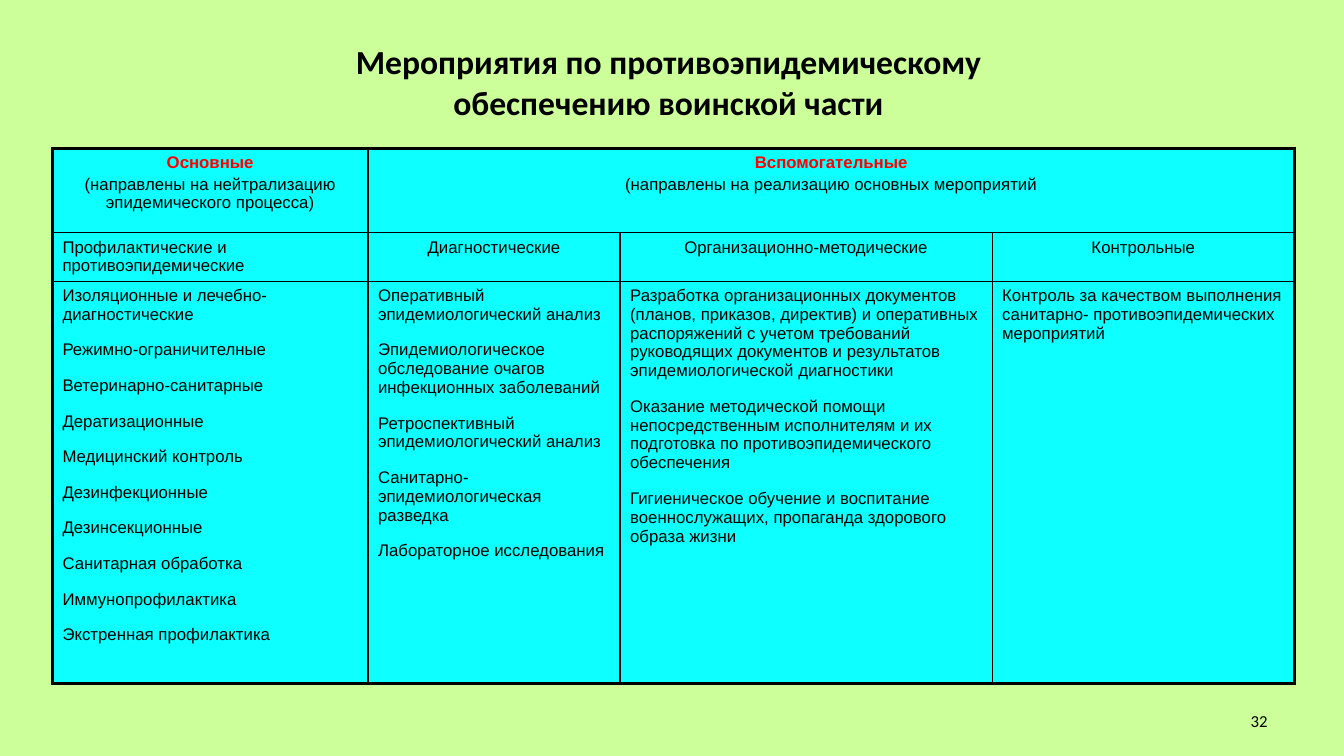
from dataclasses import dataclass

from lxml import etree
from pptx import Presentation
from pptx.dml.color import RGBColor
from pptx.enum.text import MSO_ANCHOR, PP_ALIGN
from pptx.oxml.ns import qn
from pptx.util import Pt

LEFT, CENTER, RIGHT = PP_ALIGN.LEFT, PP_ALIGN.CENTER, PP_ALIGN.RIGHT
MIDDLE = MSO_ANCHOR.MIDDLE
TITLE_ONLY = 5
EMU_PER_PX = 9144  # 100 px to the inch


@dataclass(frozen=True)
class Theme:
    background: str = "CCFF99"
    cell: str = "0DFFFF"
    ink: str = "000000"
    accent: str = "FF0000"
    title_font: str = "Calibri"
    table_font: str = "Arial"
    title_size: int = 24
    body_size: int = 12
    outer_line: float = 2.25
    inner_line: float = 1


@dataclass(frozen=True)
class Para:
    text: str
    align: PP_ALIGN = LEFT
    before: float = 0
    after: float = 0
    bold: bool = False
    color: str = Theme.ink
    size: int = Theme.body_size
    font: str = Theme.table_font


@dataclass(frozen=True)
class Entry:
    row: int
    col: int
    paras: list[Para]
    span: int = 1


THEME = Theme()
COLUMNS = [313, 250, 369, 300]
ROWS = [84, 48, 399]


def px(length: int) -> int:
    return length * EMU_PER_PX


def place(shape, left: int, top: int, width: int, height: int) -> None:
    shape.left, shape.top = px(left), px(top)
    shape.width, shape.height = px(width), px(height)


def write(frame, paras: list[Para]) -> None:
    frame.word_wrap = True
    for index, item in enumerate(paras):
        para = frame.add_paragraph() if index else frame.paragraphs[0]
        para.alignment = item.align
        para.space_before, para.space_after = Pt(item.before), Pt(item.after)
        span = para.add_run()
        span.text = item.text
        span.font.name, span.font.size = item.font, Pt(item.size)
        span.font.bold = item.bold
        span.font.color.rgb = RGBColor.from_string(item.color)


def group(heading: str, purpose: str) -> list[Para]:
    return [Para(heading, CENTER, bold=True, color=THEME.accent),
            Para(purpose, CENTER, before=2)]


def measures(*texts: str) -> list[Para]:
    return [Para(text, after=12) for text in texts]


ENTRIES = [
    # Groups of measures
    Entry(0, 0, group("Основные", "(направлены на нейтрализацию эпидемического процесса)")),
    Entry(0, 1, group("Вспомогательные", "(направлены на реализацию основных мероприятий"), span=3),
    # Kinds of measures
    Entry(1, 0, [Para("Профилактические и противоэпидемические")]),
    Entry(1, 1, [Para("Диагностические", CENTER)]),
    Entry(1, 2, [Para("Организационно-методические", CENTER)]),
    Entry(1, 3, [Para("Контрольные", CENTER)]),
    # Measures
    Entry(2, 0, measures(
        "Изоляционные и лечебно-диагностические",
        "Режимно-ограничителные",
        "Ветеринарно-санитарные",
        "Дератизационные",
        "Медицинский контроль",
        "Дезинфекционные",
        "Дезинсекционные",
        "Санитарная обработка",
        "Иммунопрофилактика",
        "Экстренная профилактика")),
    Entry(2, 1, measures(
        "Оперативный эпидемиологический анализ",
        "Эпидемиологическое обследование очагов инфекционных заболеваний",
        "Ретроспективный эпидемиологический анализ",
        "Санитарно-эпидемиологическая разведка",
        "Лабораторное исследования")),
    Entry(2, 2, measures(
        "Разработка организационных документов (планов, приказов, директив) и оперативных "
        "распоряжений с учетом требований руководящих документов и результатов "
        "эпидемиологической диагностики",
        "Оказание методической помощи непосредственным исполнителям и их подготовка по "
        "противоэпидемического обеспечения",
        "Гигиеническое обучение и воспитание военнослужащих, пропаганда здорового образа жизни")),
    Entry(2, 3, [Para("Контроль за качеством выполнения санитарно- "
                      "противоэпидемических мероприятий")]),
]


def draw_borders(cell, outer_sides: dict[str, bool]) -> None:
    properties = cell._tc.get_or_add_tcPr()
    for side, is_outer in outer_sides.items():
        width = THEME.outer_line if is_outer else THEME.inner_line
        line = etree.SubElement(properties, qn(f"a:ln{side}"), w=str(int(Pt(width))))
        fill = etree.SubElement(line, qn("a:solidFill"))
        etree.SubElement(fill, qn("a:srgbClr"), val=THEME.ink)


def draw_table(page) -> None:
    table = page.shapes.add_table(len(ROWS), len(COLUMNS), px(52), px(147),
                                  px(sum(COLUMNS)), px(sum(ROWS))).table
    table.first_row = table.horz_banding = False
    for column, width in zip(table.columns, COLUMNS):
        column.width = px(width)
    for row, height in zip(table.rows, ROWS):
        row.height = px(height)
    for entry in ENTRIES:
        last = entry.col + entry.span - 1
        cell = table.cell(entry.row, entry.col)
        if entry.span > 1:
            cell.merge(table.cell(entry.row, last))
        write(cell.text_frame, entry.paras)
        # The frame is thick, the inner grid thin
        for col in range(entry.col, last + 1):
            part = table.cell(entry.row, col)
            draw_borders(part, {"L": entry.col == 0, "R": last == len(COLUMNS) - 1,
                                "T": entry.row == 0, "B": entry.row == len(ROWS) - 1})
            part.fill.solid()
            part.fill.fore_color.rgb = RGBColor.from_string(THEME.cell)


def main() -> None:
    deck = Presentation()
    deck.slide_width, deck.slide_height = px(1333), px(750)
    page = deck.slides.add_slide(deck.slide_layouts[TITLE_ONLY])
    page.background.fill.solid()
    page.background.fill.fore_color.rgb = RGBColor.from_string(THEME.background)

    # Title
    title = page.shapes.title
    place(title, 273, 0, 780, 162)
    title.text_frame.vertical_anchor = MIDDLE
    write(title.text_frame, [Para("Мероприятия по противоэпидемическому обеспечению воинской части",
                                  CENTER, bold=True, size=THEME.title_size, font=THEME.title_font)])

    draw_table(page)

    # Page number
    number = page.shapes.add_textbox(px(956), px(695), px(311), px(40))
    number.text_frame.vertical_anchor = MIDDLE
    write(number.text_frame, [Para("32", RIGHT, font=THEME.title_font)])

    deck.save("out.pptx")


if __name__ == "__main__":
    main()
